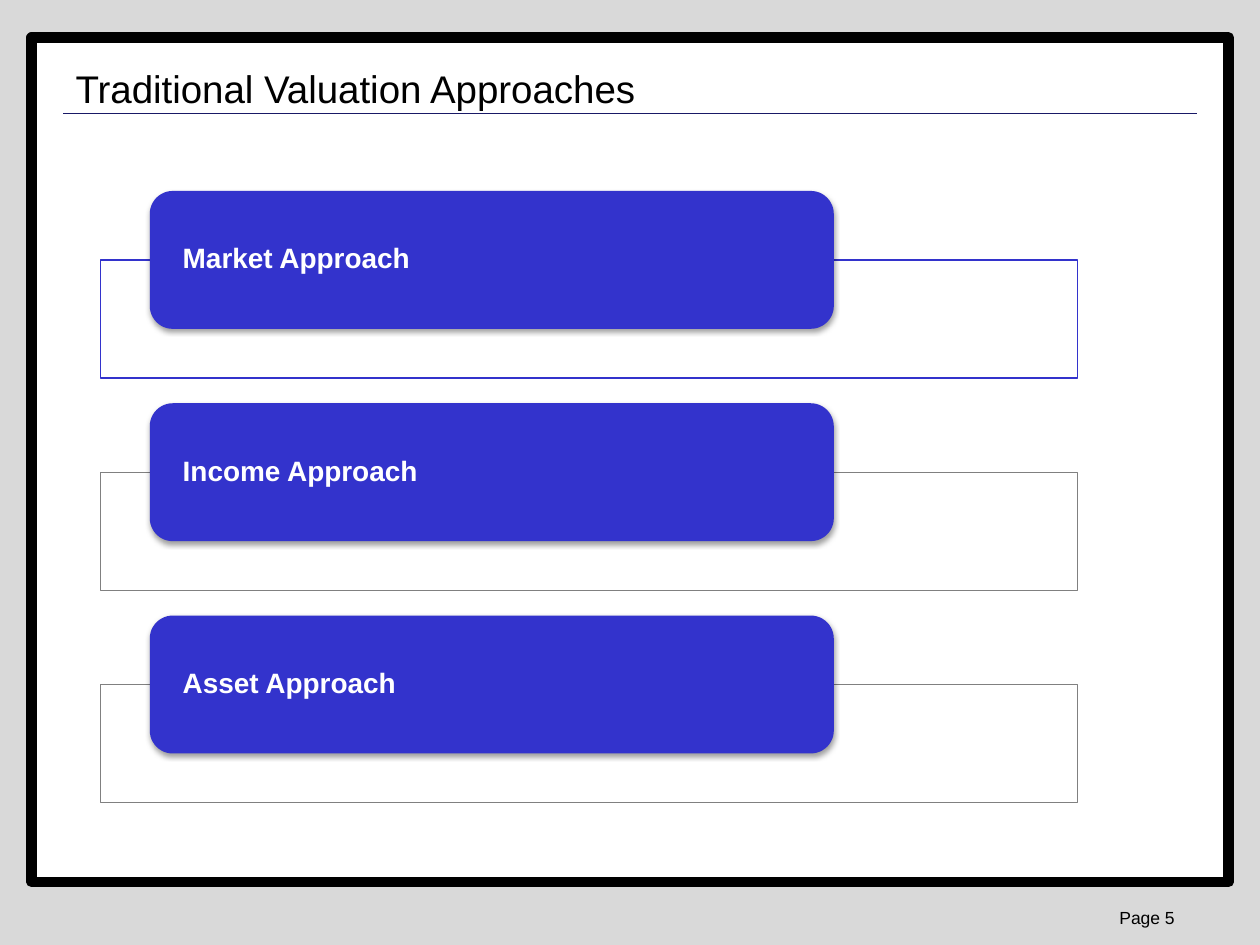
from pptx import Presentation
from pptx.dml.color import RGBColor
from pptx.enum.shapes import MSO_CONNECTOR, MSO_SHAPE
from pptx.enum.text import MSO_ANCHOR, PP_ALIGN
from pptx.oxml import parse_xml
from pptx.oxml.ns import nsdecls, qn
from pptx.util import Cm, Pt
from lxml import etree

FONT = "Arial"
COLORS = {
    "background": "D9D9D9",
    "paper": "FFFFFF",
    "ink": "000000",
    "rule": "191966",
    "accent": "3333CC",
    "muted": "808080",
}

# Each approach with the colour of its outlined panel
APPROACHES = [
    ("Market Approach", "accent"),
    ("Income Approach", "muted"),
    ("Asset Approach", "muted"),
]
PANEL_TOP = 5.24
CARD_TOP = 3.85
ROW_PITCH = 4.28


def color(name):
    return RGBColor.from_string(COLORS[name])


def set_fill(fill, name):
    fill.solid()
    fill.fore_color.rgb = color(name)


def style_text(paragraph, size, name, bold=False):
    font = paragraph.font
    font.name = FONT
    font.size = Pt(size)
    font.bold = bold
    font.color.rgb = color(name)


def add_box(slide, left, top, width, height, line_name, line_width):
    shape = slide.shapes.add_shape(
        MSO_SHAPE.RECTANGLE, Cm(left), Cm(top), Cm(width), Cm(height))
    shape.shadow.inherit = False
    set_fill(shape.fill, "paper")
    shape.line.color.rgb = color(line_name)
    shape.line.width = Pt(line_width)
    return shape


def add_panel(slide, top, line_name):
    panel = add_box(slide, 2.03, top, 19.7, 2.38, line_name, 0.75)
    fill_color = panel.fill._xPr.find(qn("a:solidFill"))[0]
    etree.SubElement(fill_color, qn("a:alpha"), val="90000")


def add_soft_shadow(shape):
    properties = shape._element.spPr
    properties.remove(properties.find(qn("a:effectLst")))
    properties.append(parse_xml(
        f'<a:effectLst {nsdecls("a")}>'
        f'<a:outerShdw blurRad="{Pt(3.1)}" dist="{Pt(1.6)}" dir="5400000" rotWithShape="0">'
        f'<a:srgbClr val="{COLORS["ink"]}"><a:alpha val="38000"/></a:srgbClr>'
        '</a:outerShdw></a:effectLst>'))


def add_card(slide, top, label):
    card = slide.shapes.add_shape(
        MSO_SHAPE.ROUNDED_RECTANGLE, Cm(3.02), Cm(top), Cm(13.79), Cm(2.78))
    card.shadow.inherit = False
    set_fill(card.fill, "accent")
    card.line.fill.background()
    add_soft_shadow(card)

    frame = card.text_frame
    frame.word_wrap = True
    frame.vertical_anchor = MSO_ANCHOR.MIDDLE
    frame.margin_left = frame.margin_right = Cm(0.53)
    frame.margin_top = frame.margin_bottom = 0
    paragraph = frame.paragraphs[0]
    paragraph.text = label
    paragraph.alignment = PP_ALIGN.LEFT
    paragraph.line_spacing = 0.9
    style_text(paragraph, 16, "paper", bold=True)


def add_rule(slide):
    rule = slide.shapes.add_connector(
        MSO_CONNECTOR.STRAIGHT, Cm(1.27), Cm(2.29), Cm(24.13), Cm(2.29))
    rule.line.color.rgb = color("rule")
    rule.line.width = Pt(1)
    etree.SubElement(rule._element.spPr, qn("a:effectLst"))


def add_page_number(slide, text):
    box = slide.shapes.add_textbox(Cm(20.98), Cm(18.16), Cm(2.95), Cm(0.69))
    box.text_frame.word_wrap = True
    paragraph = box.text_frame.paragraphs[0]
    paragraph.text = text
    paragraph.alignment = PP_ALIGN.RIGHT
    style_text(paragraph, 10, "ink")


def place_title(slide, text):
    title = slide.shapes.title
    title.left, title.top = Cm(1.27), Cm(1.14)
    title.width, title.height = Cm(22.86), Cm(1.27)
    title.text_frame.vertical_anchor = MSO_ANCHOR.MIDDLE
    paragraph = title.text_frame.paragraphs[0]
    paragraph.text = text
    paragraph.alignment = PP_ALIGN.LEFT
    style_text(paragraph, 22, "ink")
    # Bring the title in front of the framed page
    slide.shapes._spTree.append(title._element)


def main():
    presentation = Presentation()
    presentation.slide_width, presentation.slide_height = Cm(25.4), Cm(19.05)
    slide = presentation.slides.add_slide(presentation.slide_layouts[5])

    # Page frame
    set_fill(slide.background.fill, "background")
    add_box(slide, 0.64, 0.76, 24.13, 17.02, "ink", 6)
    add_page_number(slide, "Page 5")
    add_rule(slide)

    # Approaches, one row each
    for row, (label, line_name) in enumerate(APPROACHES):
        offset = row * ROW_PITCH
        add_panel(slide, PANEL_TOP + offset, line_name)
        add_card(slide, CARD_TOP + offset, label)

    place_title(slide, "Traditional Valuation Approaches")
    presentation.save("out.pptx")


if __name__ == "__main__":
    main()
